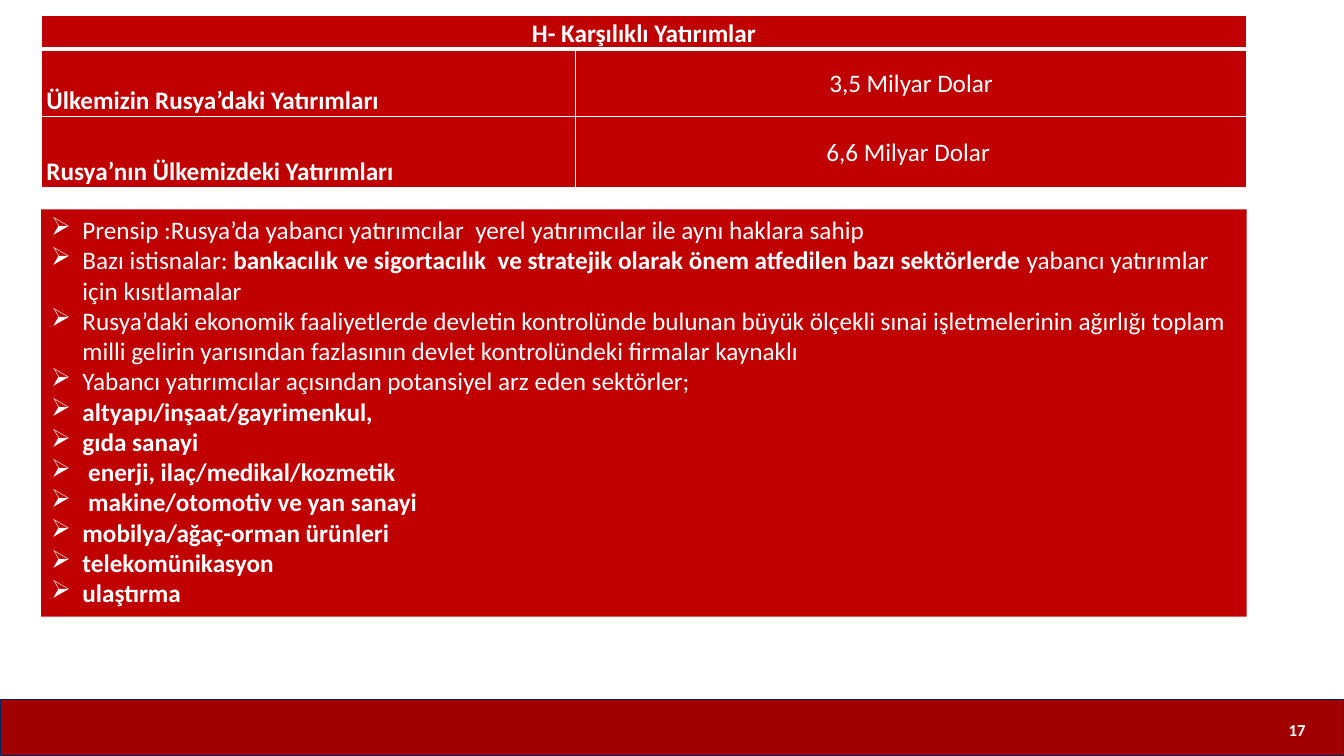
from lxml import etree
from pptx import Presentation
from pptx.dml.color import RGBColor
from pptx.enum import shapes, text
from pptx.oxml import ns
from pptx.util import Cm, Pt

# Content
HEADING = "H- Karşılıklı Yatırımlar"
INVESTMENTS = [
    ("Ülkemizin Rusya’daki Yatırımları", "3,5 Milyar Dolar"),
    ("Rusya’nın Ülkemizdeki Yatırımları", "6,6 Milyar Dolar "),
]
# Each bullet is a list of (words, bold) spans
BULLETS = [
    [("Prensip :Rusya’da yabancı yatırımcılar  yerel yatırımcılar ile aynı haklara sahip", False)],
    [("Bazı istisnalar: ", False),
     ("bankacılık ve sigortacılık  ve stratejik olarak önem atfedilen bazı sektörlerde ", True),
     ("yabancı yatırımlar için kısıtlamalar", False)],
    [("Rusya’daki ekonomik faaliyetlerde devletin kontrolünde bulunan büyük ölçekli sınai "
      "işletmelerinin ağırlığı toplam milli gelirin yarısından fazlasının devlet "
      "kontrolündeki firmalar kaynaklı", False)],
    [("Yabancı yatırımcılar açısından potansiyel arz eden sektörler;", False)],
]
SECTORS = [
    "altyapı/inşaat/gayrimenkul,",
    "gıda sanayi",
    " enerji, ilaç/medikal/kozmetik",
    " makine/otomotiv ve yan sanayi",
    "mobilya/ağaç-orman ürünleri",
    "telekomünikasyon",
    "ulaştırma",
]
PAGE_NUMBER = "17"

THEME = {
    "font": "Calibri", "body": 18, "number": 12,
    "white": "FFFFFF", "red": "C00000", "dark red": "A00000", "navy": "002060",
}

# Layout in centimetres
PAGE_WIDTH, PAGE_HEIGHT = 33.87, 19.05
LEFT, WIDTH = 1.04, 30.38
TABLE_TOP, COLUMNS, ROWS = 0.38, (13.46, 16.92), (0.86, 1.7, 1.78)
BODY_TOP, BODY_HEIGHT = 5.28, 10.26
FOOTER_TOP = 17.63
INDENT = 0.79


def color(name):
    return RGBColor.from_string(THEME[name])


def add_span(para, words, bold, size="body"):
    span = para.add_run()
    span.text = words
    span.font.name = THEME["font"]
    span.font.size = Pt(THEME[size])
    span.font.bold = bold
    span.font.color.rgb = color("white")


def add_panel(page, left, top, width, height, fill, line=None):
    panel = page.shapes.add_shape(
        shapes.MSO_SHAPE.RECTANGLE, Cm(left), Cm(top), Cm(width), Cm(height))
    panel.shadow.inherit = False
    panel.fill.solid()
    panel.fill.fore_color.rgb = color(fill)
    if line:
        panel.line.color.rgb = color(line)
        panel.line.width = Pt(1)
    else:
        panel.line.fill.background()
    return panel


def set_borders(cell, widths):
    properties = cell._tc.get_or_add_tcPr()
    for index, (side, points) in enumerate(widths.items()):
        line = etree.Element(ns.qn("a:ln" + side), w=str(Pt(points)))
        fill = etree.SubElement(line, ns.qn("a:solidFill"))
        etree.SubElement(fill, ns.qn("a:srgbClr"), val=THEME["white"])
        properties.insert(index, line)


def fill_cell(cell, words, bold, align, anchor):
    cell.margin_left = cell.margin_right = Cm(0.13)
    cell.margin_top = cell.margin_bottom = 0
    cell.vertical_anchor = anchor
    para = cell.text_frame.paragraphs[0]
    para.alignment = align
    para.line_spacing = 1.07
    para.space_after = Pt(8)
    add_span(para, words, bold)


def add_bullet(para, spans):
    properties = para._p.get_or_add_pPr()
    properties.set("marL", str(Cm(INDENT)))
    properties.set("indent", str(-Cm(INDENT)))
    etree.SubElement(properties, ns.qn("a:buChar"), char="➢")
    para.alignment = text.PP_ALIGN.LEFT
    for words, bold in spans:
        add_span(para, words, bold)


deck = Presentation()
deck.slide_width, deck.slide_height = Cm(PAGE_WIDTH), Cm(PAGE_HEIGHT)
page = deck.slides.add_slide(deck.slide_layouts[6])

# Footer band and page number
add_panel(page, 0, FOOTER_TOP, PAGE_WIDTH, PAGE_HEIGHT - FOOTER_TOP, "dark red", "navy")
number = page.shapes.add_textbox(Cm(32.08), Cm(FOOTER_TOP), Cm(1.22), Cm(1.5))
number.text_frame.word_wrap = True
number.text_frame.margin_left = number.text_frame.margin_right = 0
number.text_frame.vertical_anchor = text.MSO_ANCHOR.MIDDLE
number_para = number.text_frame.paragraphs[0]
number_para.alignment = text.PP_ALIGN.CENTER
add_span(number_para, PAGE_NUMBER, True, "number")

# Investment table
table = page.shapes.add_table(
    len(ROWS), len(COLUMNS), Cm(LEFT), Cm(TABLE_TOP), Cm(WIDTH), Cm(sum(ROWS))).table
for column, width in zip(table.columns, COLUMNS):
    column.width = Cm(width)
for row_index, height in enumerate(ROWS):
    table.rows[row_index].height = Cm(height)
    for cell in table.rows[row_index].cells:
        cell.fill.solid()
        cell.fill.fore_color.rgb = color("red")
        set_borders(cell, {"L": 1, "R": 1, "T": 3 if row_index == 1 else 1,
                           "B": 3 if row_index == 0 else 1})
heading = table.cell(0, 0)
heading.merge(table.cell(0, 1))
fill_cell(heading, HEADING, True, text.PP_ALIGN.CENTER, text.MSO_ANCHOR.BOTTOM)
for row_index, (label, amount) in enumerate(INVESTMENTS, 1):
    fill_cell(table.cell(row_index, 0), label, True,
              text.PP_ALIGN.LEFT, text.MSO_ANCHOR.BOTTOM)
    fill_cell(table.cell(row_index, 1), amount, False,
              text.PP_ALIGN.CENTER, text.MSO_ANCHOR.MIDDLE)

# Bullet panel
frame = add_panel(page, LEFT, BODY_TOP, WIDTH, BODY_HEIGHT, "red").text_frame
frame.word_wrap = True
frame.auto_size = text.MSO_AUTO_SIZE.SHAPE_TO_FIT_TEXT
frame.vertical_anchor = text.MSO_ANCHOR.TOP
for index, spans in enumerate(BULLETS + [[(sector, True)] for sector in SECTORS]):
    add_bullet(frame.add_paragraph() if index else frame.paragraphs[0], spans)

deck.save("out.pptx")
